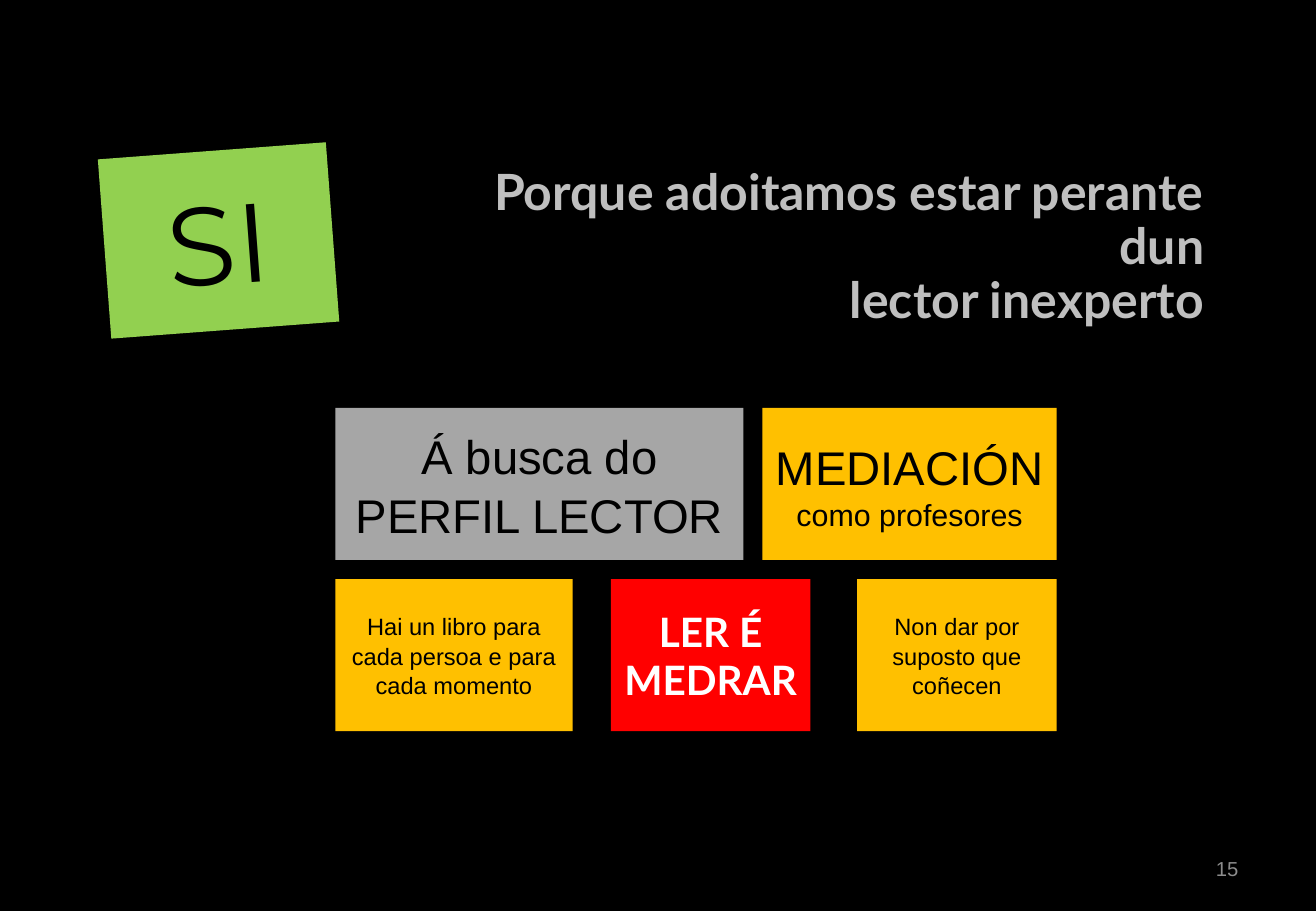
"""Build the slide about mediation for inexperienced readers."""
from pptx import Presentation
from pptx.dml.color import RGBColor
from pptx.enum.shapes import MSO_SHAPE
from pptx.enum.text import MSO_ANCHOR, MSO_AUTO_SIZE, PP_ALIGN
from pptx.util import Cm, Pt

RECTANGLE = MSO_SHAPE.RECTANGLE
MIDDLE = MSO_ANCHOR.MIDDLE
NO_AUTOFIT = MSO_AUTO_SIZE.NONE
CENTER, RIGHT = PP_ALIGN.CENTER, PP_ALIGN.RIGHT
BLACK, WHITE, AMBER = "000000", "FFFFFF", "FFC000"


def color(hex_value):
    return RGBColor.from_string(hex_value)


def write(shape, lines, font_name, font_color, bold, alignment, spacing):
    frame = shape.text_frame
    frame_format = {"word_wrap": True, "auto_size": NO_AUTOFIT, "vertical_anchor": MIDDLE}
    for name, value in frame_format.items():
        setattr(frame, name, value)
    frame.text = "\n".join(text for text, size in lines)
    for paragraph, (text, size) in zip(frame.paragraphs, lines):
        paragraph.alignment = alignment
        paragraph.line_spacing = spacing
        font = paragraph.runs[0].font
        for name, value in {"name": font_name, "size": Pt(size), "bold": bold}.items():
            setattr(font, name, value)
        font.color.rgb = color(font_color)


presentation = Presentation()
presentation.slide_width = Cm(27.51)
presentation.slide_height = Cm(19.05)
slide = presentation.slides.add_slide(presentation.slide_layouts[5])
slide.background.fill.solid()
slide.background.fill.fore_color.rgb = color(BLACK)

title = slide.shapes.title
title_format = {"left": Cm(9.78), "top": Cm(3.18), "width": Cm(15.65), "height": Cm(5.16)}
for name, value in title_format.items():
    setattr(title, name, value)
title_lines = [("Porque adoitamos estar perante dun", 29.6), ("lector inexperto", 29.6)]
write(title, title_lines, "Lato", "BFBFBF", True, RIGHT, 0.9)
title.text_frame.margin_bottom = Cm(1.26)

page_number = slide.shapes.add_textbox(Cm(19.71), Cm(17.65), Cm(6.43), Cm(1.02))
write(page_number, [("15", 12)], "Arial", "8C8C8C", False, RIGHT, 1.0)

upper_row, lower_row = 8.53, 12.11
box_height = 3.18
boxes = [
    (2.18, 3.15, 4.78, 3.76, 355.7, "92D050", "Montserrat", BLACK, False, 1.0, [("SI", 66)]),
    (7.01, upper_row, 8.53, box_height, 0, "A6A6A6", "Arial", BLACK, False, 1.05,
     [("Á busca do", 28), ("PERFIL LECTOR", 28)]),
    (15.94, upper_row, 6.15, box_height, 0, AMBER, "Arial", BLACK, False, 1.05,
     [("MEDIACIÓN", 28), ("como profesores", 18)]),
    (7.01, lower_row, 4.96, box_height, 0, AMBER, "Arial", BLACK, False, 1.05,
     [("Hai un libro para cada persoa e para cada momento", 14)]),
    (12.77, lower_row, 4.17, box_height, 0, "FF0000", "Lato", WHITE, True, 1.0,
     [("LER É MEDRAR", 24)]),
    (17.92, lower_row, 4.17, box_height, 0, AMBER, "Arial", BLACK, False, 1.05,
     [("Non dar por suposto que coñecen", 14)]),
]
for left, top, width, height, rotation, fill, font_name, ink, bold, spacing, lines in boxes:
    box = slide.shapes.add_shape(RECTANGLE, Cm(left), Cm(top), Cm(width), Cm(height))
    box.rotation = rotation
    box.shadow.inherit = False
    box.fill.solid()
    box.fill.fore_color.rgb = color(fill)
    box.line.fill.background()
    box.text_frame.margin_left = box.text_frame.margin_right = Cm(0.2)
    write(box, lines, font_name, ink, bold, CENTER, spacing)

presentation.save("out.pptx")
